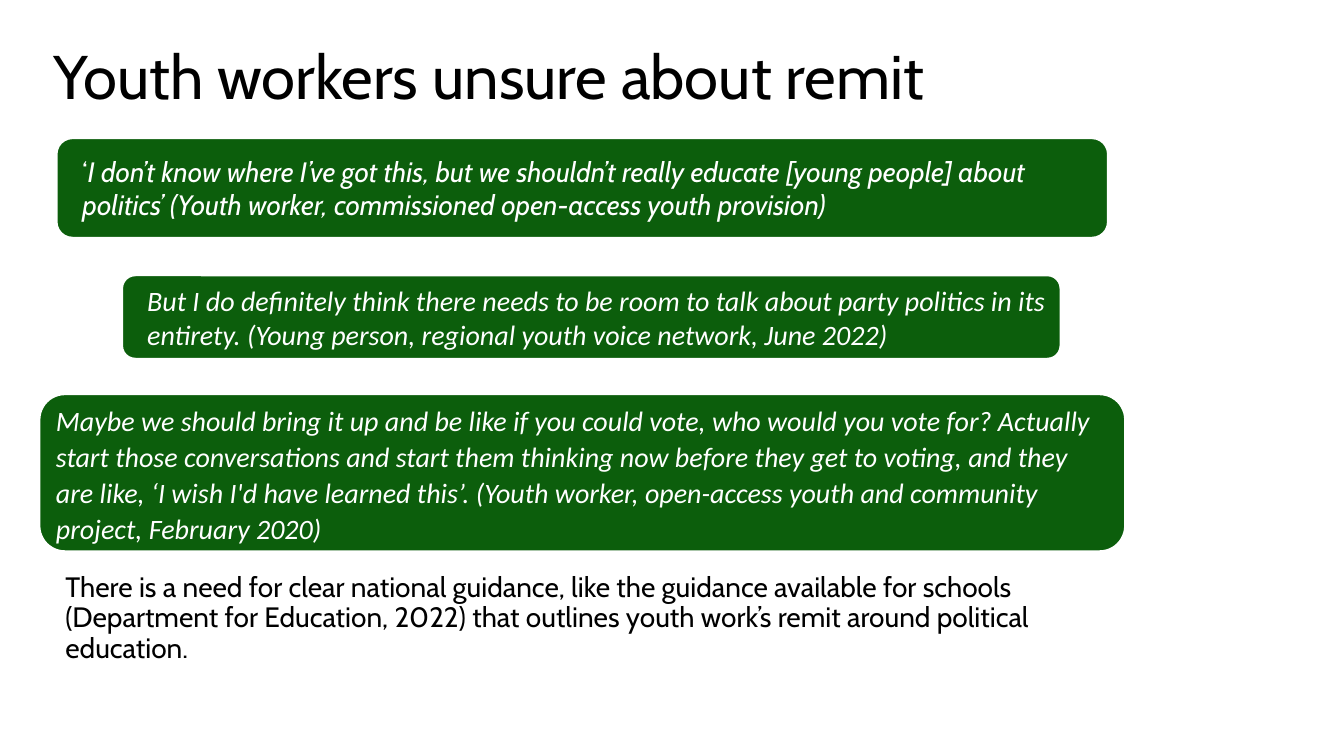
import dataclasses

import pptx
import pptx.dml.color
import pptx.enum.shapes
import pptx.enum.text
import pptx.util

Inches = pptx.util.Inches
Pt = pptx.util.Pt
Anchor = pptx.enum.text.MSO_ANCHOR


@dataclasses.dataclass(frozen=True)
class Theme:
    ink: str = "000000"
    paper: str = "FFFFFF"
    green: str = "0C5E0C"
    heading_font: str = "Cabin"
    quote_font: str = "Calibri"
    title_size: int = 44
    text_size: int = 20
    border: int = 3
    indent: float = 0.12


def rgb(value):
    return pptx.dml.color.RGBColor.from_string(value)


def write_text(frame, runs, *, font, size, color, anchor=Anchor.TOP,
               indent=0, line_spacing=1.0, space_after=0):
    frame.word_wrap = True
    frame.auto_size = pptx.enum.text.MSO_AUTO_SIZE.NONE
    frame.vertical_anchor = anchor
    paragraph = frame.paragraphs[0]
    paragraph.alignment = pptx.enum.text.PP_ALIGN.LEFT
    paragraph.line_spacing = line_spacing
    paragraph.space_before = Pt(0)
    paragraph.space_after = Pt(space_after)
    properties = paragraph._p.get_or_add_pPr()
    properties.set("marL", str(Inches(indent)))
    properties.set("indent", "0")
    for wording, italic in runs:
        run = paragraph.add_run()
        run.text = wording
        run.font.name = font
        run.font.size = Pt(size)
        run.font.italic = italic
        run.font.color.rgb = rgb(color)


class QuoteSlide:
    def __init__(self, deck, theme):
        self.theme = theme
        self.slide = deck.slides.add_slide(deck.slide_layouts[5])

    def title(self, wording, left, top, width, height):
        heading = self.slide.shapes.title
        heading.left, heading.top = Inches(left), Inches(top)
        heading.width, heading.height = Inches(width), Inches(height)
        write_text(heading.text_frame, [(wording, False)], font=self.theme.heading_font,
                   size=self.theme.title_size, color=self.theme.ink,
                   anchor=Anchor.MIDDLE, line_spacing=0.9)

    def conclusion(self, wording, left, top, width, height):
        box = self.slide.shapes.add_textbox(
            Inches(left), Inches(top), Inches(width), Inches(height))
        write_text(box.text_frame, [(wording, False)], font=self.theme.heading_font,
                   size=self.theme.text_size, color=self.theme.ink,
                   indent=self.theme.indent, line_spacing=0.9)

    def quote(self, runs, left, top, width, height, **text_format):
        panel = self.slide.shapes.add_shape(
            pptx.enum.shapes.MSO_SHAPE.ROUNDED_RECTANGLE,
            Inches(left), Inches(top), Inches(width), Inches(height))
        panel.shadow.inherit = False
        panel.fill.solid()
        panel.fill.fore_color.rgb = rgb(self.theme.green)
        panel.line.color.rgb = rgb(self.theme.paper)
        panel.line.width = Pt(self.theme.border)
        write_text(panel.text_frame, runs, size=self.theme.text_size,
                   color=self.theme.paper, anchor=Anchor.MIDDLE, **text_format)


def main():
    deck = pptx.Presentation()
    deck.slide_width, deck.slide_height = Inches(13.33), Inches(7.5)
    theme = Theme()
    remit = QuoteSlide(deck, theme)

    remit.title("Youth workers unsure about remit", 0.43, 0.28, 9.72, 1.01)
    remit.conclusion(
        "There is a need for clear national guidance, like the guidance available for schools "
        "(Department for Education, 2022) that outlines youth work’s remit around political "
        "education.", 0.43, 5.64, 9.88, 1.58)
    remit.quote(
        [("‘", False),
         ("I don’t know where I’ve got this, but we shouldn’t really educate [young people] "
          "about politics’ (Youth worker, commissioned open-access youth provision)", True)],
        0.55, 1.36, 10.45, 1.01, font=theme.heading_font, indent=theme.indent)
    remit.quote(
        [("But I do definitely think there needs to be room to talk about party politics in its "
          "entirety. (Young person, regional youth voice network, June 2022)", True)],
        1.2, 2.72, 9.33, 0.85, font=theme.quote_font, indent=theme.indent)
    remit.quote(
        [("Maybe we should bring it up and be like if you could vote, who would you vote for? "
          "Actually start those conversations and start them thinking now before they get to "
          "voting, and they are like, ‘I wish I'd have learned this’. (Youth worker, "
          "open-access youth and community project, February 2020)", True)],
        0.38, 3.9, 10.79, 1.58, font=theme.quote_font, line_spacing=1.07, space_after=8)

    deck.save("out.pptx")


if __name__ == "__main__":
    main()
